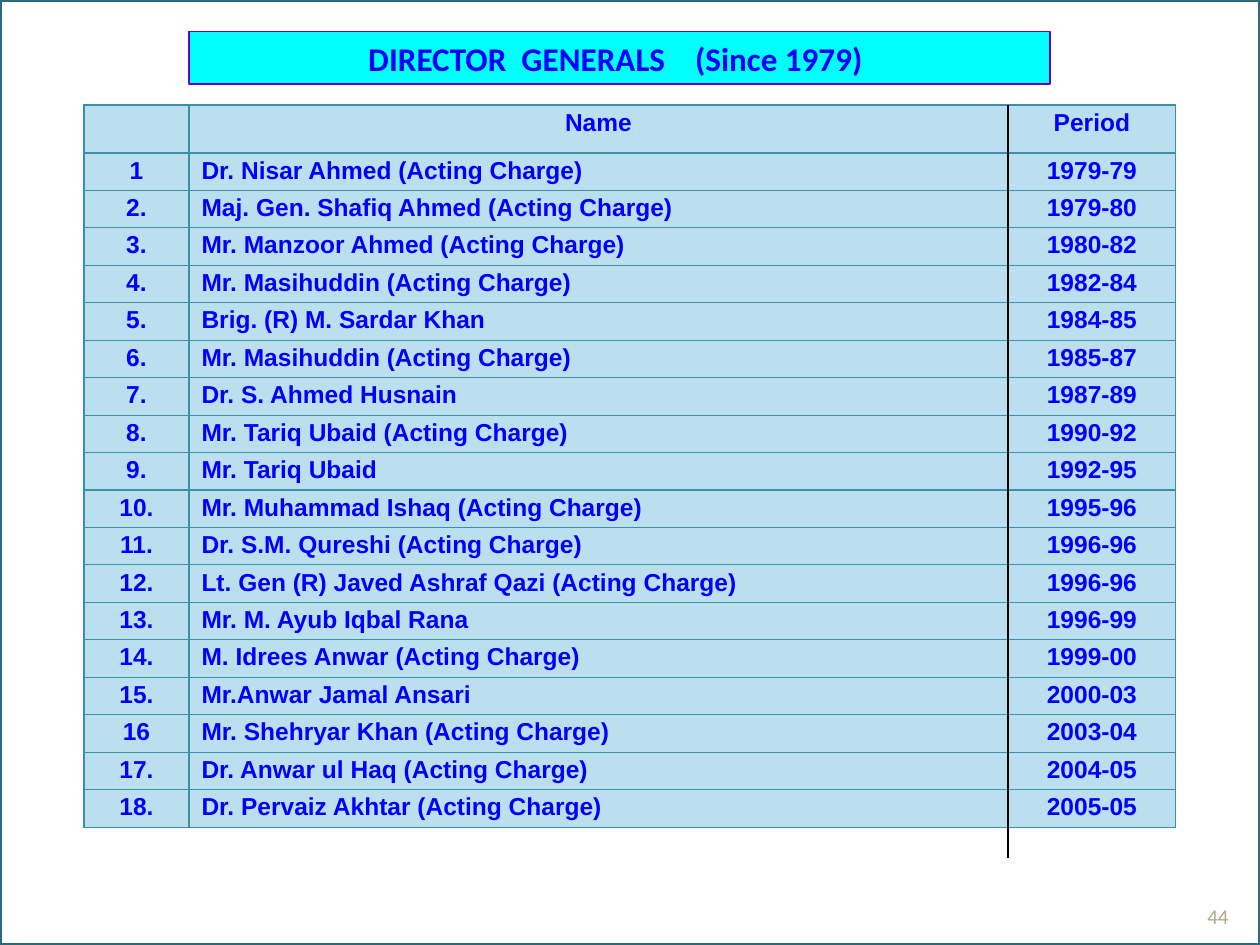
from lxml.etree import SubElement as Sub
from pptx import Presentation
from pptx.dml.color import RGBColor as Rgb
from pptx.enum.shapes import MSO_CONNECTOR as Conn, MSO_SHAPE as Geo
from pptx.enum.text import MSO_ANCHOR as Anchor, MSO_AUTO_SIZE as Fit, PP_ALIGN as Align
from pptx.oxml.ns import qn
from pptx.util import Inches, Pt

WHITE = Rgb(0xFF, 0xFF, 0xFF)
BLACK = Rgb(0x00, 0x00, 0x00)
BLUE = Rgb(0x00, 0x00, 0xFF)
CYAN = Rgb(0x00, 0xFF, 0xFF)
VIOLET = Rgb(0x66, 0x00, 0xCC)
TEAL = Rgb(0x38, 0x91, 0xA7)
FRAME = Rgb(0x29, 0x6B, 0x7C)
PALE = Rgb(0xBC, 0xDF, 0xEF)
SAND = Rgb(0xB6, 0xA9, 0x8A)

COLS, ROWS = 60, 45
ACTING = " (Acting Charge)"
HEADS = ("", "Name", "Period")
CHIEFS = [
    ("1", "Dr. Nisar Ahmed" + ACTING, "1979-79"),
    ("2.", "Maj. Gen. Shafiq Ahmed" + ACTING, "1979-80"),
    ("3.", "Mr. Manzoor Ahmed" + ACTING, "1980-82"),
    ("4.", "Mr. Masihuddin" + ACTING, "1982-84"),
    ("5.", "Brig. (R) M. Sardar Khan", "1984-85"),
    ("6.", "Mr. Masihuddin" + ACTING, "1985-87"),
    ("7.", "Dr. S. Ahmed Husnain", "1987-89"),
    ("8.", "Mr. Tariq Ubaid" + ACTING, "1990-92"),
    ("9.", "Mr. Tariq Ubaid", "1992-95"),
    ("10.", "Mr. Muhammad Ishaq" + ACTING, "1995-96"),
    ("11.", "Dr. S.M. Qureshi" + ACTING, "1996-96"),
    ("12.", "Lt. Gen (R) Javed Ashraf Qazi" + ACTING, "1996-96"),
    ("13.", "Mr. M. Ayub Iqbal Rana", "1996-99"),
    ("14.", "M. Idrees Anwar" + ACTING, "1999-00"),
    ("15.", "Mr.Anwar Jamal Ansari", "2000-03"),
    ("16", "Mr. Shehryar Khan" + ACTING, "2003-04"),
    ("17.", "Dr. Anwar ul Haq" + ACTING, "2004-05"),
    ("18.", "Dr. Pervaiz Akhtar" + ACTING, "2005-05"),
]


class Deck:
    def __init__(self):
        self.show = Presentation()
        self.show.slide_width, self.show.slide_height = Inches(10), Inches(7.5)
        self.slide = self.show.slides.add_slide(self.show.slide_layouts[5])
        self.shapes = self.slide.shapes

    def x(self, cols):
        return round(self.show.slide_width * cols / COLS)

    def y(self, rows):
        return round(self.show.slide_height * rows / ROWS)

    def box(self, left, top, width, height):
        return self.x(left), self.y(top), self.x(width), self.y(height)

    def paint(self, shape, fill, line, weight):
        shape.fill.solid()
        shape.fill.fore_color.rgb = fill
        shape.line.color.rgb = line
        shape.line.width = Pt(weight)

    def put(self, para, text, face, size, color, bold=False, align=Align.CENTER):
        para.alignment = align
        run = para.add_run()
        run.text = text
        run.font.name, run.font.size, run.font.bold = face, Pt(size), bold
        run.font.color.rgb = color

    def frame(self):
        rect = self.shapes.add_shape(Geo.RECTANGLE, *self.box(0, 0, COLS, ROWS))
        rect.shadow.inherit = False
        self.paint(rect, WHITE, FRAME, 2)
        self.shapes._spTree.insert(2, rect._element)

    def title(self, text, *area):
        head = self.shapes.title
        head.left, head.top, head.width, head.height = self.box(*area)
        self.paint(head, CYAN, VIOLET, 1)
        body = head.text_frame
        body.auto_size, body.vertical_anchor = Fit.NONE, Anchor.BOTTOM
        para = body.paragraphs[0]
        self.put(para, text, "Calibri", 18.9, BLUE, True)
        props = para._p.get_or_add_pPr()
        props.set("marL", str(Inches(0.5)))
        props.set("indent", str(-Inches(0.5)))

    def edge(self, cell):
        props = cell._tc.get_or_add_tcPr()
        for spot, side in enumerate(("lnL", "lnR", "lnT", "lnB")):
            line = props.makeelement(qn("a:" + side), {"w": str(Pt(0.75))})
            props.insert(spot, line)
            solid = Sub(line, qn("a:solidFill"))
            Sub(solid, qn("a:srgbClr"), val=str(TEAL))

    def cell(self, cell, text, align):
        cell.fill.solid()
        cell.fill.fore_color.rgb = PALE
        self.edge(cell)
        para = cell.text_frame.paragraphs[0]
        para.line_spacing, para.space_before = 0.9, Pt(2.8)
        self.put(para, text, "Arial", 14, BLUE, True, align)

    def table(self, data, left, top, spans, first, rest):
        high = first + rest * (len(data) - 1)
        area = self.box(left, top, sum(spans), high)
        grid = self.shapes.add_table(len(data), len(spans), *area).table
        for col, span in zip(grid.columns, spans):
            col.width = self.x(span)
        for i, (row, texts) in enumerate(zip(grid.rows, data)):
            row.height = self.y(rest if i else first)
            for j, text in enumerate(texts):
                align = Align.LEFT if i and j == 1 else Align.CENTER
                self.cell(grid.cell(i, j), text, align)

    def label(self, text, *area):
        body = self.shapes.add_textbox(*self.box(*area)).text_frame
        body.word_wrap, body.vertical_anchor = True, Anchor.BOTTOM
        self.put(body.paragraphs[0], text, "Calibri", 12, SAND)

    def rule(self, col, top, end):
        x = self.x(col)
        line = self.shapes.add_connector(Conn.STRAIGHT, x, self.y(top), x, self.y(end))
        line.line.color.rgb = BLACK
        line.line.width = Pt(0.75)
        Sub(line._element.spPr, qn("a:effectLst"))


def main():
    deck = Deck()
    deck.frame()
    deck.title("DIRECTOR  GENERALS    (Since 1979) ", 9, 1.5, 41, 2.5)
    deck.table([HEADS] + CHIEFS, 4, 5, (5, 39, 8), 1.93, 1.78)
    deck.label("44", 56.5, 41.4, 3, 3.1)
    deck.rule(48, 5, 40.85)
    deck.show.save("out.pptx")


if __name__ == "__main__":
    main()
